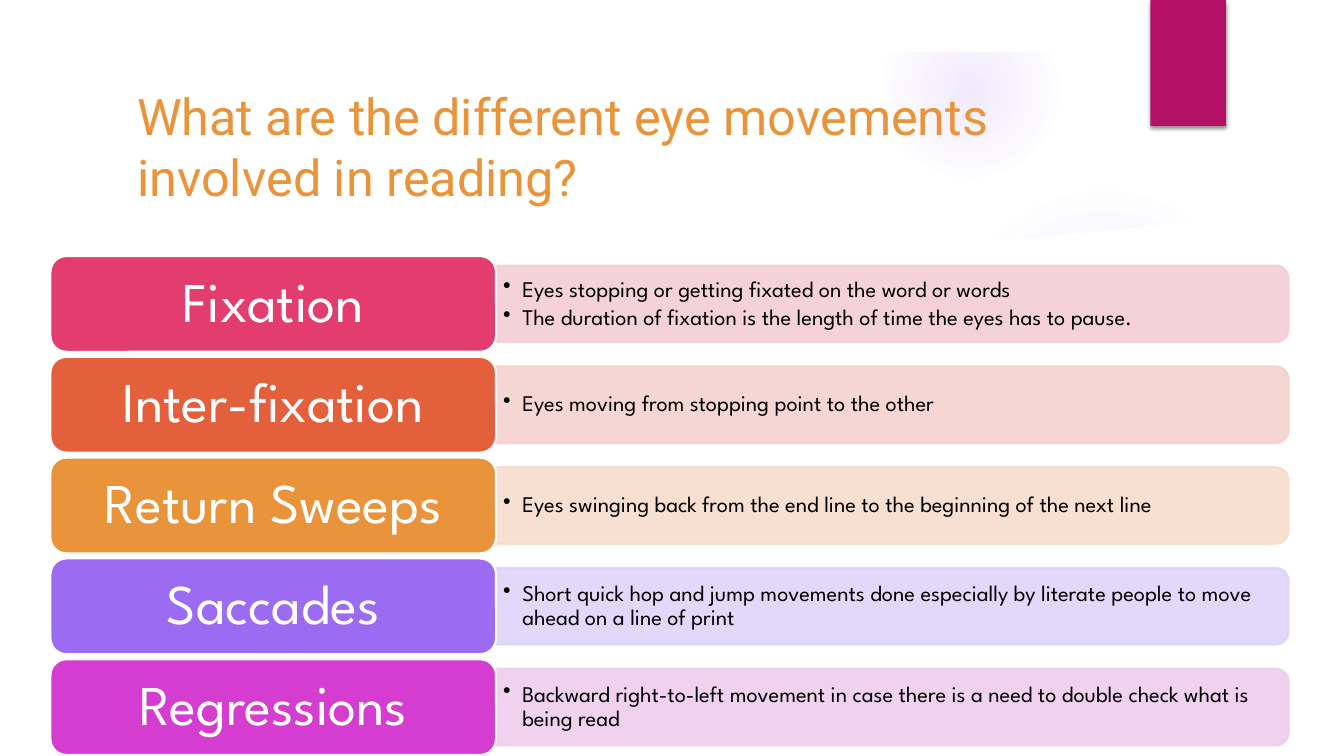
"""Builds a slide on the eye movements involved in reading."""
import pptx
import pptx.util
import pptx.dml.color
import pptx.enum.shapes
import pptx.enum.text
import pptx.oxml
import pptx.oxml.ns
import lxml.etree

TITLE = "What are the different eye movements involved in reading?"
MOVEMENTS = [
    ("Fixation", "E33D6F", "F4CED5", [
        "Eyes stopping or getting fixated on the word or words",
        "The duration of fixation is the length of time the eyes has to pause."]),
    ("Inter-fixation", "E45F3C", "F5D2CE", [
        "Eyes moving from stopping point to the other"]),
    ("Return Sweeps", "E9943A", "F7DCCE", [
        "Eyes swinging back from the end line to the beginning of the next line"]),
    ("Saccades", "9B6BF2", "DED4FA", [
        "Short quick hop and jump movements done especially by literate people to move "
        "ahead on a line of print"]),
    ("Regressions", "D53DD0", "EFCEEE", [
        "Backward right-to-left movement in case there is a need to double check what is "
        "being read"]),
]
COLORS = {"title": "E9943A", "tab": "B31166", "glow": "9B6BF2",
          "white": "FFFFFF", "black": "000000"}
GLOWS = [
    (9.41, 1.83, 3.08, [(0, 7), (36, 6), (69, 0)]),
    (8.75, 0.01, 1.75, [(0, 14), (36, 7), (73, 0)]),
]
PANEL = [(0.5, 2.04), (3.21, 2.33), (5.11, 2.44), (7.08, 2.48), (8.4, 2.46),
         (9.49, 2.41), (10.32, 2.35), (11.16, 2.27), (12, 2.17), (12.84, 2.04),
         (12.84, 7), (0.5, 7)]
HEADING_FONT, BODY_FONT = "Roboto", "League Spartan"
TOP, PITCH = 2.54, 1.0
LABEL_X, LABEL_W, LABEL_H = 0.5, 4.42, 0.95
BAR_X, BAR_W, BAR_H = 4.92, 7.86, 0.76
TEXT_W, TEXT_H = 7.82, 0.69

Inches, Pt = pptx.util.Inches, pptx.util.Pt
MSO_SHAPE = pptx.enum.shapes.MSO_SHAPE
MSO_ANCHOR = pptx.enum.text.MSO_ANCHOR
PP_ALIGN = pptx.enum.text.PP_ALIGN
NS = pptx.oxml.ns.nsdecls("a")


def rgb(color):
    return pptx.dml.color.RGBColor.from_string(color)


def paint(sp, fill, line=None):
    sp.shadow.inherit = False
    sp.fill.solid()
    sp.fill.fore_color.rgb = rgb(fill)
    if line:
        sp.line.color.rgb = rgb(line)
        sp.line.width = Pt(1.5)
    else:
        sp.line.fill.background()


def add_shape(slide, kind, box, fill, line=None):
    sp = slide.shapes.add_shape(kind, *map(Inches, box))
    paint(sp, fill, line)
    return sp


def set_alpha(sp, percent):
    for color in sp._element.spPr.iter(pptx.oxml.ns.qn("a:srgbClr")):
        alpha = lxml.etree.SubElement(color, pptx.oxml.ns.qn("a:alpha"))
        alpha.set("val", str(percent * 1000))


def set_insets(tf, x, y):
    tf.margin_left = tf.margin_right = Inches(x)
    tf.margin_top = tf.margin_bottom = Inches(y)
    tf.vertical_anchor = MSO_ANCHOR.MIDDLE
    tf.word_wrap = True


def style(p, font, size, color):
    for r in p.runs:
        r.font.name = font
        r.font.size = Pt(size)
        r.font.color.rgb = rgb(color)


def add_glow(slide, x, y, size, stops):
    sp = add_shape(slide, MSO_SHAPE.OVAL, (x, y, size, size), COLORS["glow"])
    gs = "".join(
        f'<a:gs pos="{pos * 1000}"><a:srgbClr val="{COLORS["glow"]}">'
        f'<a:alpha val="{alpha * 1000}"/></a:srgbClr></a:gs>' for pos, alpha in stops)
    grad = pptx.oxml.parse_xml(
        f'<a:gradFill {NS}><a:gsLst>{gs}</a:gsLst><a:path path="circle">'
        '<a:fillToRect l="50000" t="50000" r="50000" b="50000"/></a:path></a:gradFill>')
    spPr = sp._element.spPr
    spPr.replace(spPr.find(pptx.oxml.ns.qn("a:solidFill")), grad)


def add_backdrop(slide):
    for glow in GLOWS:
        add_glow(slide, *glow)
    points = [(Inches(x), Inches(y)) for x, y in PANEL]
    builder = slide.shapes.build_freeform(*points[0])
    builder.add_line_segments(points[1:])
    paint(builder.convert_to_shape(), COLORS["white"])
    add_shape(slide, MSO_SHAPE.RECTANGLE, (0, 0, 13.33, 0.52), COLORS["white"])
    tab = add_shape(slide, MSO_SHAPE.RECTANGLE, (11.41, 0, 0.75, 1.25), COLORS["tab"])
    effects = tab._element.spPr.find(pptx.oxml.ns.qn("a:effectLst"))
    effects.append(pptx.oxml.parse_xml(
        f'<a:outerShdw {NS} blurRad="38100" dist="25400" dir="5400000">'
        f'<a:srgbClr val="{COLORS["black"]}"><a:alpha val="45000"/></a:srgbClr>'
        '</a:outerShdw>'))


def add_title(slide):
    sp = slide.shapes.title
    sp.left, sp.top, sp.width, sp.height = map(Inches, (1.26, 1.06, 9.58, 0.77))
    tf = sp.text_frame
    tf.text = TITLE
    tf.auto_size = pptx.enum.text.MSO_AUTO_SIZE.NONE
    set_insets(tf, 0.1, 0.05)
    tf.paragraphs[0].alignment = PP_ALIGN.LEFT
    style(tf.paragraphs[0], HEADING_FONT, 36, COLORS["title"])
    slide.shapes._spTree.append(sp._element)


def add_bullets(slide, middle, points):
    sp = slide.shapes.add_textbox(
        *map(Inches, (BAR_X, middle - TEXT_H / 2, TEXT_W, TEXT_H)))
    tf = sp.text_frame
    set_insets(tf, 0.07, 0.03)
    for i, point in enumerate(points):
        p = tf.add_paragraph() if i else tf.paragraphs[0]
        p.text = point
        pPr = p._p.get_or_add_pPr()
        pPr.set("marL", str(Inches(0.19)))
        pPr.set("indent", str(-Inches(0.19)))
        pPr.append(pptx.oxml.parse_xml(f'<a:buChar {NS} char="•"/>'))
        p.line_spacing = 0.9
        p.space_after = Pt(3)
        style(p, BODY_FONT, 16, COLORS["black"])


def add_movement(slide, top, name, color, tint, points):
    middle = top + LABEL_H / 2
    bar = add_shape(slide, MSO_SHAPE.ROUND_2_SAME_RECTANGLE,
                    (BAR_X + (BAR_W - BAR_H) / 2, middle - BAR_W / 2, BAR_H, BAR_W),
                    tint, tint)
    bar.rotation = 90
    set_alpha(bar, 90)
    add_bullets(slide, middle, points)
    label = add_shape(slide, MSO_SHAPE.ROUNDED_RECTANGLE,
                      (LABEL_X, top, LABEL_W, LABEL_H), color, COLORS["white"])
    tf = label.text_frame
    tf.text = name
    set_insets(tf, 0.22, 0.08)
    p = tf.paragraphs[0]
    p.alignment = PP_ALIGN.CENTER
    p.line_spacing = 0.9
    style(p, BODY_FONT, 40, COLORS["white"])


def main():
    prs = pptx.Presentation()
    prs.slide_width, prs.slide_height = Inches(13.33), Inches(7.5)
    slide = prs.slides.add_slide(prs.slide_layouts[5])
    add_backdrop(slide)
    add_title(slide)
    for i, movement in enumerate(MOVEMENTS):
        add_movement(slide, TOP + i * PITCH, *movement)
    prs.save("out.pptx")


if __name__ == "__main__":
    main()
